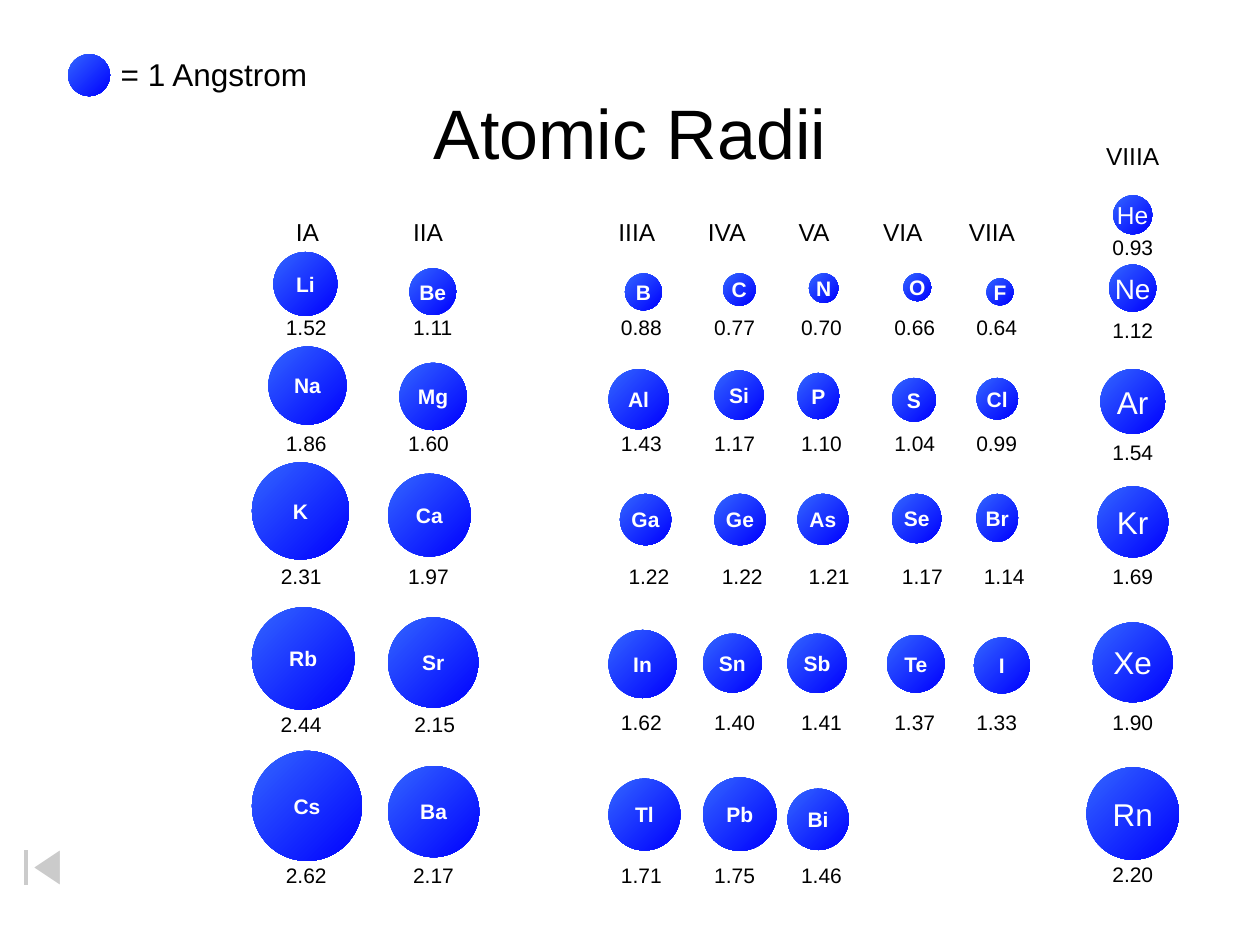
from lxml.etree import SubElement
from pptx import Presentation
from pptx.dml.color import RGBColor
from pptx.enum.shapes import MSO_SHAPE
from pptx.enum.text import MSO_ANCHOR, PP_ALIGN
from pptx.oxml.ns import qn
from pptx.util import Inches, Pt

HUES = {"pale": "3366FF", "deep": "0000FF", "ink": "000000", "white": "FFFFFF"}
FONT = "Arial"
SCALE = 3  # angstroms of radius per inch of drawn diameter
NARROW = {"P": 0.33, "Br": 0.33}  # widths of the two uneven balls

# Each row: left, top and tab stops of its values, then its atoms as
# symbol, radius, ball left, ball top
ROWS = [
    (2.17, 2.45, [1.01],
     [("Li", 1.52, 2.17, 2), ("Be", 1.11, 3.25, 2.13)]),
    (2.17, 3.37, [0.97],
     [("Na", 1.86, 2.13, 2.75), ("Mg", 1.60, 3.17, 2.88)]),
    (2.13, 4.42, [1.01],
     [("K", 2.31, 2, 3.67), ("Ca", 1.97, 3.08, 3.76)]),
    (2.13, 5.6, [1.06],
     [("Rb", 2.44, 2, 4.82), ("Sr", 2.15, 3.08, 4.9)]),
    (2.17, 6.8, [1.01],
     [("Cs", 2.62, 2, 5.96), ("Ba", 2.17, 3.08, 6.08)]),
]
STOPS = [0.74, 1.43, 2.17, 2.82]
ROWS += [
    (4.83, 2.45, STOPS,
     [("B", 0.88, 4.96, 2.17), ("C", 0.77, 5.74, 2.17), ("N", 0.70, 6.42, 2.17),
      ("O", 0.66, 7.17, 2.17), ("F", 0.64, 7.83, 2.21)]),
    (4.83, 3.37, STOPS,
     [("Al", 1.43, 4.83, 2.93), ("Si", 1.17, 5.67, 2.94), ("P", 1.10, 6.33, 2.96),
      ("S", 1.04, 7.08, 3), ("Cl", 0.99, 7.75, 3)]),
    (4.89, 4.42, STOPS,
     [("Ga", 1.22, 4.92, 3.92), ("Ge", 1.22, 5.67, 3.92), ("As", 1.21, 6.33, 3.92),
      ("Se", 1.17, 7.08, 3.92), ("Br", 1.14, 7.75, 3.92)]),
    (4.83, 5.58, STOPS,
     [("In", 1.62, 4.83, 5), ("Sn", 1.40, 5.58, 5.03), ("Sb", 1.41, 6.25, 5.03),
      ("Te", 1.37, 7.04, 5.04), ("I", 1.33, 7.73, 5.06)]),
    (4.83, 6.8, STOPS[:2],
     [("Tl", 1.71, 4.83, 6.18), ("Pb", 1.75, 5.58, 6.17), ("Bi", 1.46, 6.25, 6.26)]),
]
# Noble gases: symbol, radius, ball top, value top, text size
NOBLE = [("He", 0.93, 1.55, 1.81, 14), ("Ne", 1.12, 2.1, 2.47, 16),
         ("Ar", 1.54, 2.93, 3.44, 18), ("Kr", 1.69, 3.86, 4.42, 18),
         ("Xe", 1.90, 4.94, 5.58, 18), ("Rn", 2.20, 6.09, 6.79, 18)]
AXIS = 8.99  # centre line of the noble gas column


def hue(name):
    return RGBColor.from_string(HUES[name])


def write(para, text, size, color="ink", bold=False):
    run = para.add_run()
    run.text = text
    run.font.name, run.font.size, run.font.bold = FONT, Pt(size), bold
    run.font.color.rgb = hue(color)


def add_ball(shapes, left, top, wide, high, text="", size=12, bold=True):
    ball = shapes.add_shape(MSO_SHAPE.OVAL, Inches(left), Inches(top),
                            Inches(wide), Inches(high))
    ball.shadow.inherit = False
    ball.line.fill.background()
    ball.fill.gradient()
    ball.fill.gradient_angle = 315
    for stop, name in zip(ball.fill.gradient_stops, ("pale", "deep")):
        stop.color.rgb = hue(name)
    if text:
        frame = ball.text_frame
        frame.word_wrap = False
        frame.vertical_anchor = MSO_ANCHOR.MIDDLE
        para = frame.paragraphs[0]
        para.alignment = PP_ALIGN.CENTER
        write(para, text, size, "white", bold)


def add_text(shapes, left, top, wide, high, text, size=12, stops=()):
    box = shapes.add_textbox(Inches(left), Inches(top), Inches(wide), Inches(high))
    frame = box.text_frame
    frame.word_wrap = bool(stops)
    frame.margin_right = 0
    para = frame.paragraphs[0]
    if stops:
        tabs = SubElement(para._p.get_or_add_pPr(), qn("a:tabLst"))
        for stop in stops:
            SubElement(tabs, qn("a:tab"), pos=str(Inches(stop)), algn="l")
    write(para, text, size)


def add_button(shapes):
    button = shapes.add_shape(MSO_SHAPE.ACTION_BUTTON_BEGINNING, Inches(0),
                              Inches(6.69), Inches(0.67), Inches(0.39))
    button.shadow.inherit = False
    button.fill.solid()
    button.fill.fore_color.rgb = hue("white")
    tint = button._element.spPr.find(qn("a:solidFill"))[0]
    SubElement(tint, qn("a:alpha"), val="50000")
    button.line.color.rgb = hue("white")
    button.line.width = Pt(0.75)


def add_title(slide):
    title = slide.shapes.title
    title.left, title.top = Inches(0.75), Inches(0.42)
    title.width, title.height = Inches(8.5), Inches(1.25)
    title.text_frame.vertical_anchor = MSO_ANCHOR.MIDDLE
    para = title.text_frame.paragraphs[0]
    para.alignment = PP_ALIGN.CENTER
    write(para, "Atomic Radii", 40)


def add_main(shapes):
    for _, _, _, atoms in ROWS:
        for name, radius, left, top in atoms:
            high = radius / SCALE
            add_ball(shapes, left, top, NARROW.get(name, high), high, name)
    for left, top, stops, atoms in ROWS:
        text = "\t".join(f"{atom[1]:.2f}" for atom in atoms)
        add_text(shapes, left, top, stops[-1] + 0.54, 0.3, text, stops=stops)
    heads = ["IA", "IIA", "IIIA", "IVA", "VA", "VIA", "VIIA"]
    add_text(shapes, 2.25, 1.67, 5.99, 0.33, "\t".join(heads), 14,
             [0.93, 2.56, 3.27, 3.99, 4.66, 5.34])


def add_noble(shapes):
    for name, radius, top, _, size in NOBLE:
        wide = radius / SCALE
        add_ball(shapes, AXIS - wide / 2, top, wide, wide, name, size, False)
    for _, radius, _, top, _ in NOBLE:
        add_text(shapes, 8.73, top, 0.52, 0.3, f"{radius:.2f}")


def main():
    deck = Presentation()
    deck.slide_width, deck.slide_height = Inches(10), Inches(7.5)
    slide = deck.slides.add_slide(deck.slide_layouts[5])
    shapes = slide.shapes
    add_title(slide)
    add_button(shapes)
    # Main groups of the table
    add_main(shapes.add_group_shape().shapes)
    # Scale key
    key = shapes.add_group_shape().shapes
    add_ball(key, 0.54, 0.43, 1 / SCALE, 1 / SCALE)
    add_text(key, 0.86, 0.39, 1.69, 0.4, "= 1 Angstrom", 18)
    # Noble gas column
    add_noble(shapes.add_group_shape().shapes)
    add_text(shapes, 8.68, 1.07, 0.62, 0.33, "VIIIA", 14)
    deck.save("out.pptx")


if __name__ == "__main__":
    main()
